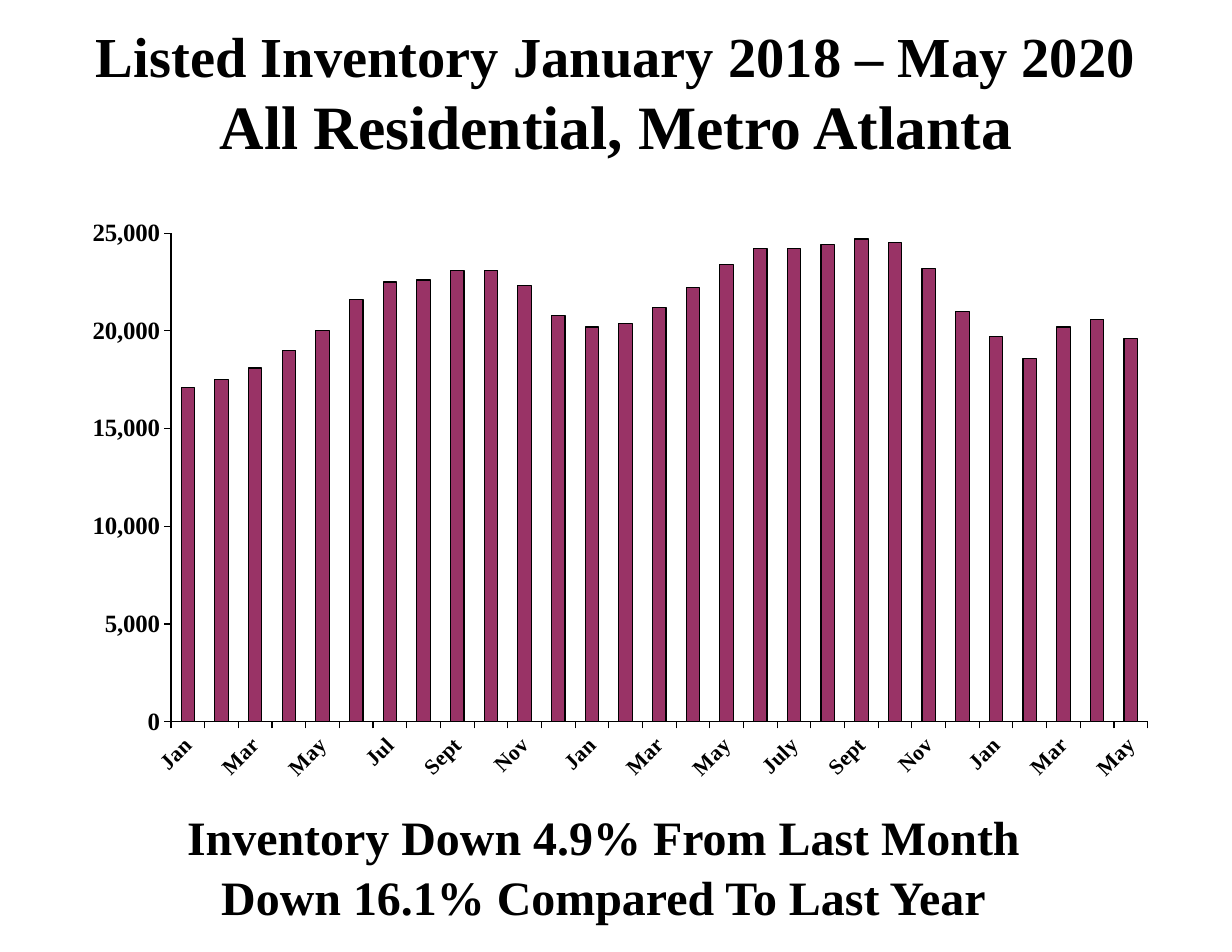
from dataclasses import dataclass
from lxml import etree
from pptx import Presentation
from pptx.chart.data import CategoryChartData
from pptx.dml.color import RGBColor
from pptx.enum.chart import XL_CHART_TYPE as ChartType, XL_TICK_LABEL_POSITION as LabelPosition
from pptx.enum.chart import XL_TICK_MARK as TickMark
from pptx.enum.text import MSO_ANCHOR as Anchor, MSO_AUTO_SIZE as AutoSize, PP_ALIGN as Align
from pptx.oxml.ns import qn
from pptx.util import Inches, Pt

WIDTH, HEIGHT = Inches(11), Inches(8.5)

MONTHS = [
    "Jan", "Feb", "Mar", "Apr", "May", "Jun", "Jul", "Aug", "Sept", "Oct", "Nov", "Dec",
    "Jan", "Feb", "Mar", "Apr", "May", "June", "July", "Aug", "Sept", "Oct", "Nov", "Dec",
    "Jan", "Feb", "Mar", "Apr", "May",
]
LISTINGS = [
    17100, 17500, 18100, 19000, 20000, 21600, 22500, 22600, 23100, 23100, 22300, 20800,
    20200, 20400, 21200, 22200, 23400, 24200, 24200, 24400, 24700, 24500, 23200, 21000,
    19700, 18600, 20200, 20600, 19600,
]


def color(hex_string):
    return RGBColor.from_string(hex_string)


def place(shape, left, top, width, height):
    """Position a shape by shares of the slide's size."""
    shape.left, shape.top = int(WIDTH * left), int(HEIGHT * top)
    shape.width, shape.height = int(WIDTH * width), int(HEIGHT * height)


@dataclass
class SlideBuilder:
    slide: object
    font_name: str = "Times New Roman"
    ink: str = "000000"
    bar_color: str = "993366"

    def style(self, font, size):
        font.name, font.size, font.bold = self.font_name, Pt(size), True
        font.color.rgb = color(self.ink)

    def heading(self, placeholder, box, lines, gap=0):
        """Fill a placeholder with centred (text, size) lines."""
        place(placeholder, *box)
        frame = placeholder.text_frame
        frame.word_wrap = True
        frame.auto_size = AutoSize.NONE
        frame.vertical_anchor = Anchor.MIDDLE
        for index, (text, size) in enumerate(lines):
            paragraph = frame.add_paragraph() if index else frame.paragraphs[0]
            paragraph.alignment = Align.CENTER
            paragraph.space_before = Pt(gap if index else 0)
            properties = paragraph._p.get_or_add_pPr()
            properties.set("marL", "0")
            properties.set("indent", "0")
            etree.SubElement(properties, qn("a:buNone"))
            run = paragraph.add_run()
            run.text = text
            self.style(run.font, size)

    def axis(self, axis, size):
        axis.has_major_gridlines = False
        axis.major_tick_mark = TickMark.OUTSIDE
        axis.minor_tick_mark = TickMark.NONE
        axis.format.line.color.rgb = color(self.ink)
        axis.format.line.width = Pt(0.75)
        self.style(axis.tick_labels.font, size)

    def column_chart(self, box, plot_area, categories, name, values):
        data = CategoryChartData(number_format="#,##0")
        data.categories = categories
        data.add_series(name, values)
        frame = self.slide.shapes.add_chart(ChartType.COLUMN_CLUSTERED, 0, 0, WIDTH, HEIGHT, data)
        place(frame, *box)
        chart = frame.chart
        chart.has_title = chart.has_legend = False
        self.style(chart.font, 14)

        plot = chart.plots[0]
        plot.gap_width = 150
        plot.vary_by_categories = False
        bars = plot.series[0].format
        bars.fill.solid()
        bars.fill.fore_color.rgb = color(self.bar_color)
        bars.line.color.rgb = color(self.ink)
        bars.line.width = Pt(0.75)

        months, counts = chart.category_axis, chart.value_axis
        self.axis(months, 14)
        self.axis(counts, 16)
        months.tick_label_position = LabelPosition.LOW
        counts.minimum_scale, counts.maximum_scale, counts.major_unit = 0, 25000, 5000
        counts.tick_labels.number_format = "#,##0"
        counts.tick_labels.number_format_is_linked = False
        self.slant_labels(months._element, every=2)
        self.fix_plot_area(chart, plot_area)

    @staticmethod
    def slant_labels(axis_element, every):
        """Turn the labels by 45 degrees and show only one in `every`."""
        body = axis_element.find(qn("c:txPr")).find(qn("a:bodyPr"))
        body.set("rot", str(-45 * 60000))
        body.set("vert", "horz")
        skip = etree.Element(qn("c:tickLblSkip"), val=str(every))
        axis_element.find(qn("c:noMultiLvlLbl")).addprevious(skip)

    @staticmethod
    def fix_plot_area(chart, shares):
        """Set the inner plot area as x, y, w, h shares of the chart."""
        area = chart._chartSpace.find(qn("c:chart")).find(qn("c:plotArea"))
        layout = area.find(qn("c:layout"))
        if layout is None:
            layout = etree.Element(qn("c:layout"))
            area.insert(0, layout)
        manual = etree.SubElement(layout, qn("c:manualLayout"))
        settings = [("layoutTarget", "inner"), ("xMode", "edge"), ("yMode", "edge")]
        for tag, value in settings + list(zip("xywh", shares)):
            etree.SubElement(manual, qn(f"c:{tag}"), val=str(value))


def main():
    presentation = Presentation()
    presentation.slide_width, presentation.slide_height = WIDTH, HEIGHT
    slide = presentation.slides.add_slide(presentation.slide_layouts[1])
    title, summary = slide.placeholders
    builder = SlideBuilder(slide)

    builder.heading(title, (0, 0.026, 1, 0.14), [
        ("Listed Inventory January 2018 – May 2020", 36.3),
        ("All Residential, Metro Atlanta", 39.6),
    ])
    builder.heading(summary, (-0.01, 0.845, 1, 0.13), [
        ("Inventory Down 4.9% From Last Month", 30.8),
        ("Down 16.1% Compared To Last Year", 30.8),
    ], gap=1.2)
    builder.column_chart((0.042, 0.182, 0.905, 0.716), (0.107, 0.088, 0.876, 0.717),
                         MONTHS, "Series 1", LISTINGS)
    presentation.save("out.pptx")


if __name__ == "__main__":
    main()
